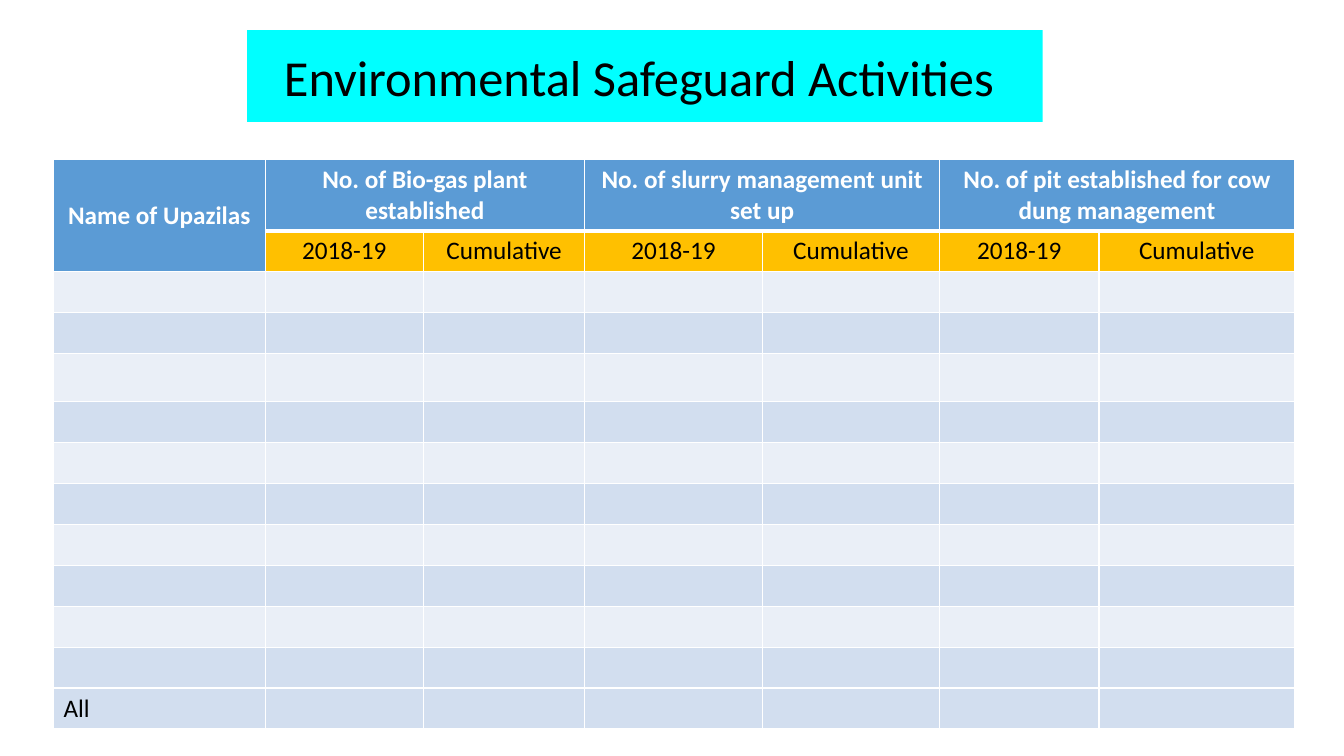
from dataclasses import dataclass

from lxml import etree
from pptx import Presentation
from pptx.dml.color import RGBColor
from pptx.enum.text import MSO_ANCHOR, MSO_AUTO_SIZE, PP_ALIGN
from pptx.oxml.ns import qn
from pptx.table import Table, _Cell
from pptx.text.text import TextFrame
from pptx.util import Inches, Pt

CENTER, LEFT = PP_ALIGN.CENTER, PP_ALIGN.LEFT
MIDDLE, TOP = MSO_ANCHOR.MIDDLE, MSO_ANCHOR.TOP
NO_AUTOFIT = MSO_AUTO_SIZE.NONE

FONT = "Calibri"
BLACK, WHITE, CYAN = "000000", "FFFFFF", "00FFFF"
BLUE, AMBER = "5B9BD5", "FFC000"
BANDS = ("EAEFF7", "D2DEEF")

COLUMN_WIDTHS = (2.1, 1.57, 1.6, 1.76, 1.76, 1.58, 1.94)
ROW_HEIGHTS = (0.71, 0.4, 0.4, 0.4, 0.48) + (0.4,) * 8
LAST_ROW = len(ROW_HEIGHTS) - 1
ACTIVITIES = (
    "No. of Bio-gas plant established",
    "No. of slurry management unit set up",
    "No. of pit established for cow dung management",
)
PERIODS = ("2018-19", "Cumulative")


@dataclass(frozen=True)
class CellStyle:
    fill: str
    color: str = BLACK
    bold: bool = False
    align: PP_ALIGN = CENTER
    anchor: MSO_ANCHOR = MIDDLE
    top: float = 1
    bottom: float = 1


NAME_STYLE = CellStyle(BLUE, WHITE, bold=True)
ACTIVITY_STYLE = CellStyle(BLUE, WHITE, bold=True, bottom=3)
PERIOD_STYLE = CellStyle(AMBER, top=3)


def rgb(value: str) -> RGBColor:
    return RGBColor.from_string(value)


def write_text(frame: TextFrame, text: str, *, size: float = 18,
               color: str = BLACK, bold: bool = False,
               align: PP_ALIGN = CENTER) -> None:
    paragraph = frame.paragraphs[0]
    paragraph.alignment = align
    run = paragraph.add_run()
    run.text = text
    run.font.name = FONT
    run.font.size = Pt(size)
    run.font.bold = bold
    run.font.color.rgb = rgb(color)


def set_borders(cell: _Cell, top: float, bottom: float) -> None:
    properties = cell._tc.get_or_add_tcPr()
    for side, width in (("L", 1), ("R", 1), ("T", top), ("B", bottom)):
        line = etree.SubElement(properties, qn(f"a:ln{side}"), w=str(Pt(width)))
        fill = etree.SubElement(line, qn("a:solidFill"))
        etree.SubElement(fill, qn("a:srgbClr"), val=WHITE)


def format_cell(cell: _Cell, style: CellStyle, text: str = "") -> None:
    set_borders(cell, style.top, style.bottom)
    cell.fill.solid()
    cell.fill.fore_color.rgb = rgb(style.fill)
    cell.vertical_anchor = style.anchor
    if text:
        write_text(cell.text_frame, text, color=style.color,
                   bold=style.bold, align=style.align)


def fill_header(table: Table) -> None:
    table.cell(0, 0).merge(table.cell(1, 0))
    format_cell(table.cell(0, 0), NAME_STYLE, "Name of Upazilas")
    format_cell(table.cell(1, 0), NAME_STYLE)
    for index, activity in enumerate(ACTIVITIES):
        first = 1 + index * len(PERIODS)
        table.cell(0, first).merge(table.cell(0, first + 1))
        for offset, period in enumerate(PERIODS):
            heading = activity if offset == 0 else ""
            format_cell(table.cell(0, first + offset), ACTIVITY_STYLE, heading)
            format_cell(table.cell(1, first + offset), PERIOD_STYLE, period)


def fill_body(table: Table) -> None:
    for row in range(2, LAST_ROW + 1):
        band = BANDS[1] if row == LAST_ROW else BANDS[row % 2]
        style = CellStyle(band, align=LEFT, anchor=TOP)
        for column in range(len(COLUMN_WIDTHS)):
            is_total = row == LAST_ROW and column == 0
            format_cell(table.cell(row, column), style, "All" if is_total else "")


def main() -> None:
    presentation = Presentation()
    presentation.slide_width = Inches(13.33)
    presentation.slide_height = Inches(7.5)
    slide = presentation.slides.add_slide(presentation.slide_layouts[5])

    title = slide.shapes.title
    title.left, title.top = Inches(2.45), Inches(0.3)
    title.width, title.height = Inches(7.89), Inches(0.91)
    title.fill.solid()
    title.fill.fore_color.rgb = rgb(CYAN)
    title.text_frame.auto_size = NO_AUTOFIT
    title.text_frame.vertical_anchor = MIDDLE
    write_text(title.text_frame, "Environmental Safeguard Activities ", size=36)

    table = slide.shapes.add_table(
        len(ROW_HEIGHTS), len(COLUMN_WIDTHS), Inches(0.53), Inches(1.58),
        Inches(sum(COLUMN_WIDTHS)), Inches(sum(ROW_HEIGHTS))).table
    for column, width in zip(table.columns, COLUMN_WIDTHS):
        column.width = Inches(width)
    for row, height in zip(table.rows, ROW_HEIGHTS):
        row.height = Inches(height)
    fill_header(table)
    fill_body(table)

    presentation.save("out.pptx")


if __name__ == "__main__":
    main()
